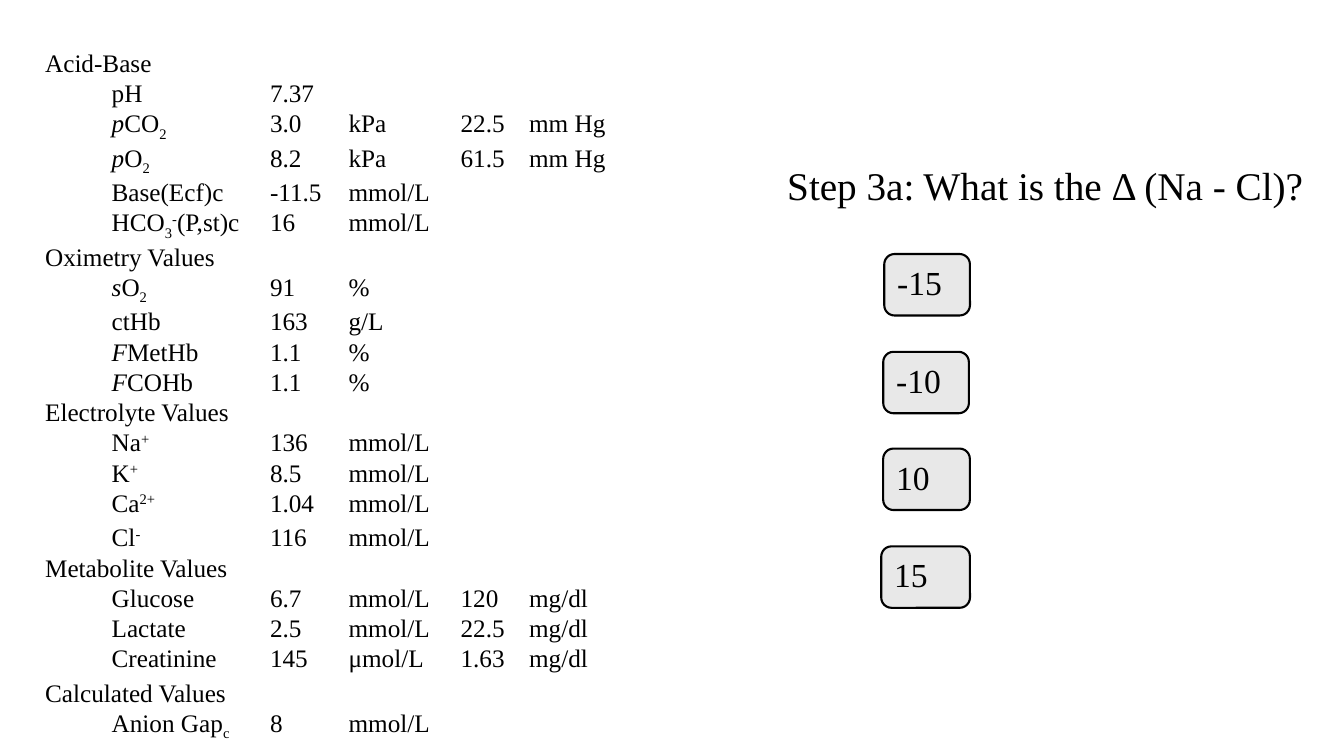
from lxml import etree
from pptx import Presentation
from pptx import util as u
from pptx.dml.color import RGBColor
from pptx.enum import shapes, text
from pptx.oxml.ns import qn

FONT = "Times New Roman"
BLACK = "000000"
GREY = "E8E8E8"
TAB_STOPS = [0.23, 0.66, 2.23, 3.01, 4.12, 4.8]
ITALIC, SUB, SUPER = "italic", "subscript", "superscript"
BASELINES = {SUB: "-25000", SUPER: "30000"}

# Each row: runs of the name, its values, extra space below in points
SECTIONS = [
    ("Acid-Base", [
        (["pH"], ["7.37"], 0),
        ([("p", ITALIC), "CO", ("2", SUB)], ["3.0", "kPa", "22.5", "mm Hg"], 0),
        ([("p", ITALIC), "O", ("2", SUB)], ["8.2", "kPa", "61.5", "mm Hg"], 0),
        (["Base(Ecf)c"], ["-11.5", "mmol/L"], 0),
        (["HCO", ("3", SUB), ("-", SUPER), "(P,st)c"], ["16", "mmol/L"], 0),
    ]),
    ("Oximetry Values", [
        ([("s", ITALIC), "O", ("2", SUB)], ["91", "%"], 0),
        (["ctHb"], ["163", "g/L"], 0),
        ([("F", ITALIC), "MetHb"], ["1.1", "%"], 0),
        ([("F", ITALIC), "COHb"], ["1.1", "%"], 0),
    ]),
    ("Electrolyte Values", [
        (["Na", ("+", SUPER)], ["136", "mmol/L"], 0),
        (["K", ("+", SUPER)], ["8.5", "mmol/L"], 0),
        (["Ca", ("2+", SUPER)], ["1.04", "mmol/L"], 3),
        (["Cl", ("-", SUPER)], ["116", "mmol/L"], 0),
    ]),
    ("Metabolite Values", [
        (["Glucose"], ["6.7", "mmol/L", "120", "mg/dl"], 0),
        (["Lactate"], ["2.5", "mmol/L", "22.5", "mg/dl"], 0),
        (["Creatinine"], ["145", "μmol/L", "1.63", "mg/dl"], 3),
    ]),
    ("Calculated Values", [
        (["Anion Gap", ("c", SUB)], ["8", "mmol/L"], 0),
    ]),
]

# Left, top, width, label
ANSWERS = [
    (8.77, 2.52, 0.85, "-15"),
    (8.76, 3.49, 0.85, "-10"),
    (8.76, 4.45, 0.86, "10"),
    (8.74, 5.42, 0.88, "15"),
]


def color(value):
    return RGBColor.from_string(value)


def add_run(paragraph, content, size, style=None):
    run = paragraph.add_run()
    run.text = content
    run.font.name = FONT
    run.font.size = u.Pt(size)
    run.font.color.rgb = color(BLACK)
    if style == ITALIC:
        run.font.italic = True
    elif style:
        run.font._element.set("baseline", BASELINES[style])


def add_text_box(slide, left, top, width, height):
    box = slide.shapes.add_textbox(
        u.Inches(left), u.Inches(top), u.Inches(width), u.Inches(height))
    box.text_frame.word_wrap = True
    return box.text_frame


def set_tab_stops(paragraph):
    tab_list = etree.SubElement(paragraph._p.get_or_add_pPr(), qn("a:tabLst"))
    for position in TAB_STOPS:
        etree.SubElement(tab_list, qn("a:tab"),
                         pos=str(u.Inches(position)), algn="l")


def add_lab_line(frame, runs, space_below=0):
    first = frame.paragraphs[0]
    paragraph = frame.add_paragraph() if first.runs else first
    set_tab_stops(paragraph)
    if space_below:
        paragraph.space_after = u.Pt(space_below)
    for run in runs:
        content, style = (run, None) if isinstance(run, str) else run
        add_run(paragraph, content, 18, style)


def add_lab_values(slide):
    frame = add_text_box(slide, 0.35, 0.42, 6.23, 6.77)
    for heading, rows in SECTIONS:
        add_lab_line(frame, [heading])
        for name, values, space_below in rows:
            cells = "".join("\t" + value for value in values)
            add_lab_line(frame, ["\t\t", *name, cells], space_below)


def add_answer(slide, left, top, width, label):
    shape = slide.shapes.add_shape(
        shapes.MSO_SHAPE.ROUNDED_RECTANGLE,
        u.Inches(left), u.Inches(top), u.Inches(width), u.Inches(0.61))
    shape.shadow.inherit = False
    shape.fill.solid()
    shape.fill.fore_color.rgb = color(GREY)
    shape.line.color.rgb = color(BLACK)
    shape.line.width = u.Pt(1.5)
    shape.text_frame.vertical_anchor = text.MSO_ANCHOR.MIDDLE
    shape.text_frame.margin_bottom = u.Inches(0.1)
    paragraph = shape.text_frame.paragraphs[0]
    paragraph.alignment = text.PP_ALIGN.LEFT
    add_run(paragraph, label, 24)


def main():
    presentation = Presentation()
    presentation.slide_width = u.Inches(13.33)
    presentation.slide_height = u.Inches(7.5)
    slide = presentation.slides.add_slide(presentation.slide_layouts[6])

    # Question and answer buttons
    question = add_text_box(slide, 7.71, 1.55, 5.5, 0.57)
    add_run(question.paragraphs[0], "Step 3a: What is the Δ (Na - Cl)?", 28)
    for answer in ANSWERS:
        add_answer(slide, *answer)

    # Blood gas results
    add_lab_values(slide)

    presentation.save("out.pptx")


if __name__ == "__main__":
    main()
